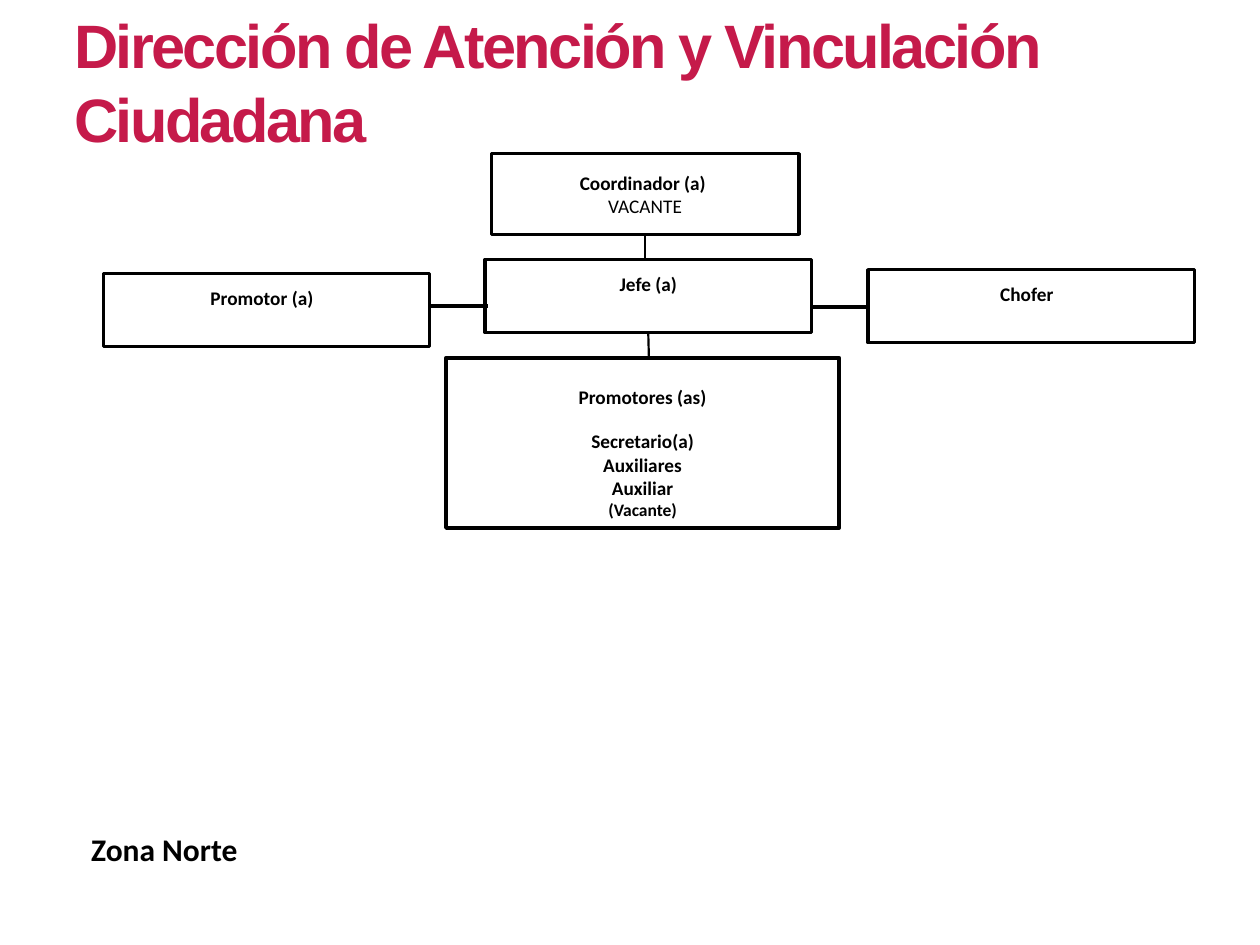
from lxml import etree
from pptx import Presentation
from pptx.dml.color import RGBColor
from pptx.enum import shapes, text
from pptx.oxml.ns import qn
from pptx.util import Inches, Pt

BLACK = RGBColor(0, 0, 0)
WHITE = RGBColor(255, 255, 255)
CRIMSON = RGBColor(0xC5, 0x1A, 0x4A)
BOTTOM = 2


def style(paragraph, size, bold=True, font="Calibri", color=BLACK):
    for run in paragraph.runs:
        run.font.size = Pt(size)
        run.font.bold = bold
        run.font.name = font
        run.font.color.rgb = color


def add_position(slide, left, top, width, height, lines, border=2,
                 anchor=text.MSO_ANCHOR.MIDDLE):
    """Chart box; each line is (wording, size, bold)."""
    box = slide.shapes.add_shape(
        shapes.MSO_SHAPE.RECTANGLE,
        Inches(left), Inches(top), Inches(width), Inches(height))
    box.shadow.inherit = False
    box.fill.solid()
    box.fill.fore_color.rgb = WHITE
    box.line.color.rgb = BLACK
    box.line.width = Pt(border)
    frame = box.text_frame
    frame.word_wrap = True
    frame.vertical_anchor = anchor
    frame.text = "\n".join(wording for wording, _, _ in lines)
    for paragraph, (_, size, bold) in zip(frame.paragraphs, lines):
        paragraph.alignment = text.PP_ALIGN.CENTER
        style(paragraph, size, bold)
    return box


def add_single_role(slide, left, top, role, right_inset=0.1):
    """Equal-sized box whose role sits above the middle."""
    box = add_position(slide, left, top, 2.59, 0.58, [(role, 11, True)])
    box.text_frame.margin_bottom = Inches(0.24)
    box.text_frame.margin_right = Inches(right_inset)
    return box


def add_link(slide, x1, y1, x2, y2, width, source=None):
    link = slide.shapes.add_connector(
        shapes.MSO_CONNECTOR.STRAIGHT,
        Inches(x1), Inches(y1), Inches(x2), Inches(y2))
    link.line.color.rgb = BLACK
    link.line.width = Pt(width)
    etree.SubElement(link._element.spPr, qn("a:effectLst"))
    if source is not None:
        link.begin_connect(source, BOTTOM)


def add_label(slide, left, top, width, height, wording, size, wrap, **look):
    label = slide.shapes.add_textbox(
        Inches(left), Inches(top), Inches(width), Inches(height))
    label.text_frame.word_wrap = wrap
    label.text_frame.text = wording
    paragraph = label.text_frame.paragraphs[0]
    style(paragraph, size, **look)
    return paragraph


def main():
    deck = Presentation()
    deck.slide_width, deck.slide_height = Inches(10), Inches(7.5)
    slide = deck.slides.add_slide(deck.slide_layouts[6])

    # Positions
    coordinator = add_position(
        slide, 3.9, 1.22, 2.44, 0.64,
        [("Coordinador (a) ", 11, True), ("VACANTE", 11, False)])
    chief = add_single_role(slide, 3.85, 2.06, "Jefe (a)")
    add_single_role(slide, 6.89, 2.14, "Chofer", right_inset=0.17)
    add_single_role(slide, 0.82, 2.17, "Promotor (a)", right_inset=0.17)

    # Team under the chief
    team = add_position(
        slide, 3.54, 2.84, 3.12, 1.35,
        [("Promotores (as)", 11, True), ("Secretario(a)", 11, True),
         ("Auxiliares", 11, True), ("Auxiliar", 11, True),
         ("(Vacante)", 10, True)],
        border=2.25, anchor=text.MSO_ANCHOR.TOP)
    team.text_frame.margin_top = Inches(0.22)
    team.text_frame.paragraphs[1].space_before = Pt(12)

    # Links between positions
    add_link(slide, 5.12, 1.86, 5.12, 2.06, 1.25, source=coordinator)
    add_link(slide, 5.15, 2.64, 5.15, 2.84, 1.25, source=chief)
    add_link(slide, 3.87, 2.43, 3.41, 2.43, 2.25)
    add_link(slide, 6.9, 2.44, 6.44, 2.44, 2.25)

    # Zone and title
    zone = add_label(slide, 0.62, 6.54, 1.37, 0.4, "Zona Norte", 18, False)
    zone.alignment = text.PP_ALIGN.CENTER
    title = add_label(slide, 0.49, 0.01, 9.32, 1.28,
                      "Dirección de Atención y Vinculación Ciudadana",
                      35, True, font="Arial", color=CRIMSON)
    title.runs[0].font._element.set("spc", "-150")

    deck.save("out.pptx")


if __name__ == "__main__":
    main()
